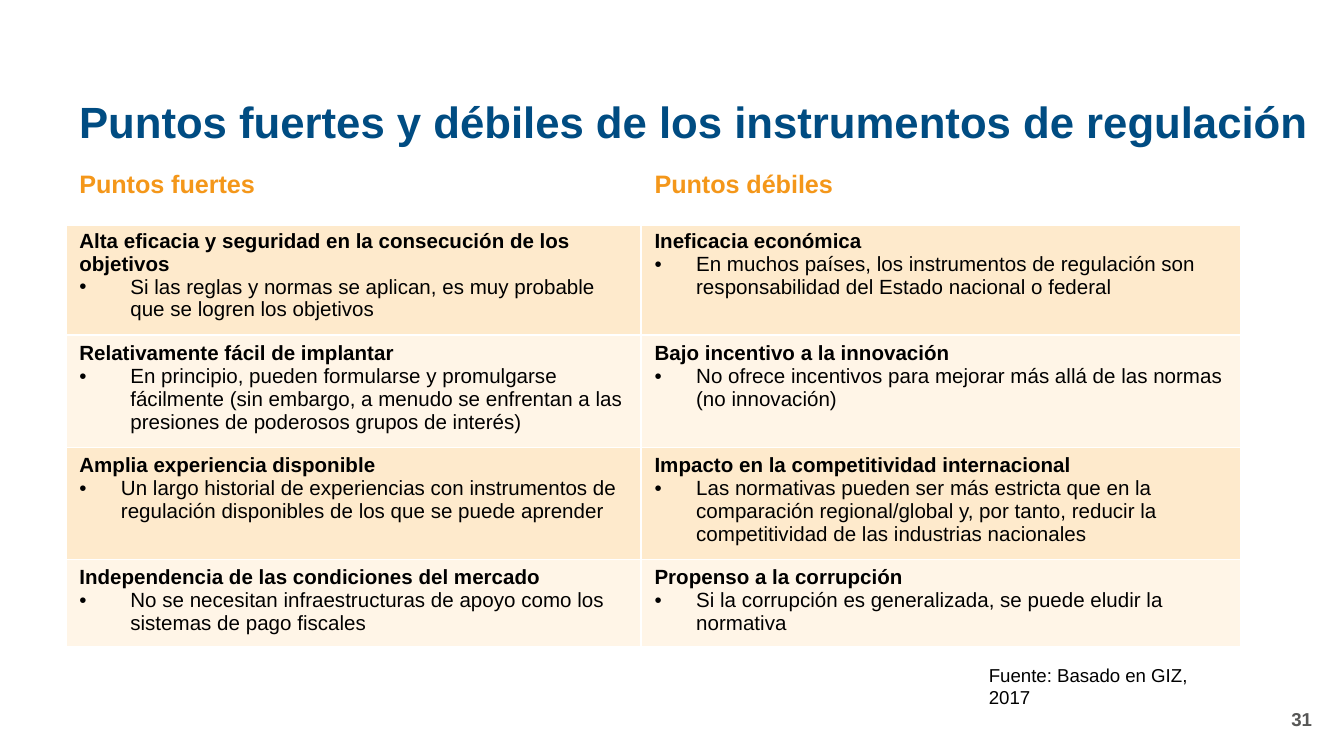
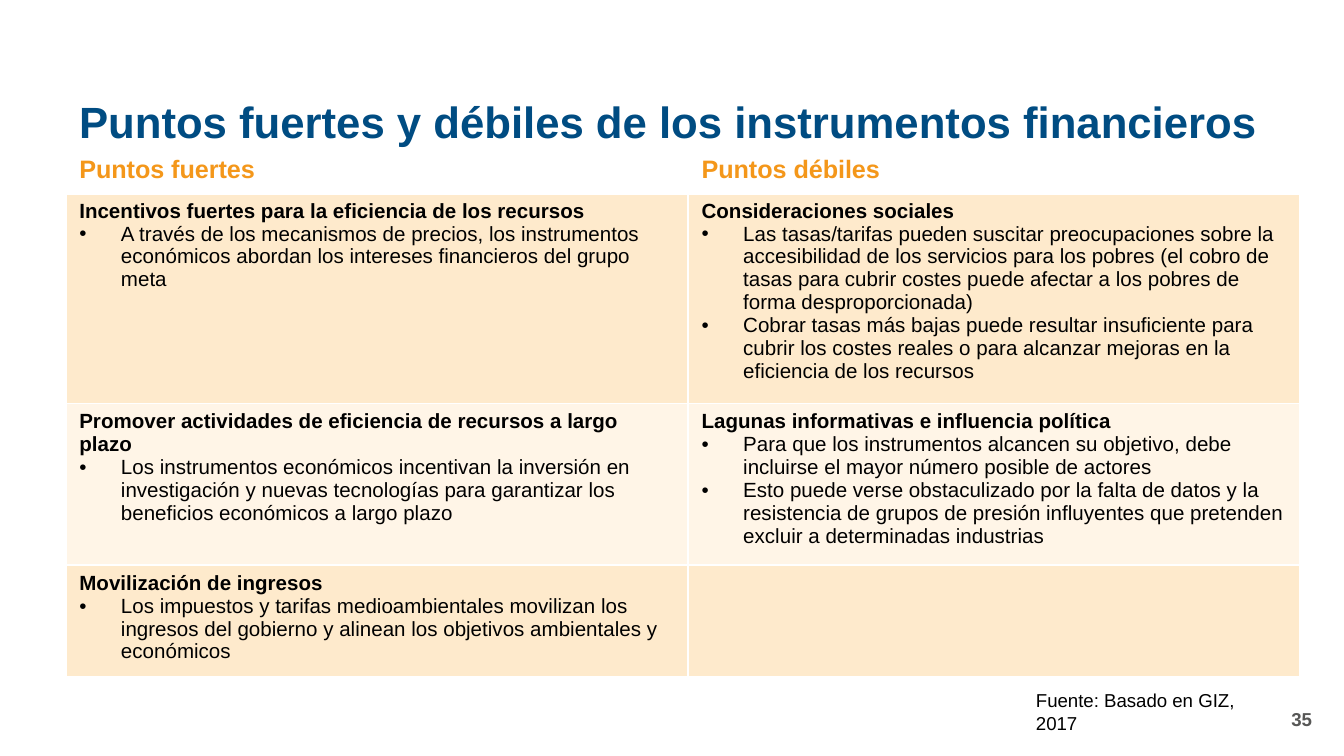
"""Build two slides comparing strengths and weaknesses of policy instruments."""
from dataclasses import dataclass

from lxml import etree
from pptx import Presentation
from pptx import util as u
from pptx.dml import color as c
from pptx.enum import text as t
from pptx.oxml import ns


@dataclass(frozen=True)
class Theme:
    font: str = "Arial"
    title: str = "004C82"
    heading: str = "F4971A"
    body: str = "000000"
    number: str = "575756"
    border: str = "FFFFFF"
    bands: tuple[str, str] = ("FEEACC", "FFF5E7")
    title_size: float = 23.4
    heading_size: float = 13.5
    body_size: float = 11
    small_size: float = 10
    thin: float = 1
    thick: float = 3


@dataclass(frozen=True)
class Point:
    heading: str
    bullets: tuple[str, ...]
    indent: float = 0.31


@dataclass(frozen=True)
class Comparison:
    title: str
    number: str
    top: float
    columns: tuple[float, float]
    heights: tuple[float, ...]
    rows: tuple[tuple[Point | None, Point | None], ...]
    source_at: tuple[float, float]


THEME = Theme()
LEFT = 0.49
HEADINGS = ("Puntos fuertes", "Puntos débiles")
SOURCE = "Fuente: Basado en GIZ, 2017"

COMPARISONS = (
    Comparison(
        "Puntos fuertes y débiles de los instrumentos de regulación",
        "31", 1.22, (4.28, 4.46), (0.44, 0.65, 0.83, 0.65, 0.65),
        (
            (Point("Alta eficacia y seguridad en la consecución de los objetivos",
                   ("Si las reglas y normas se aplican, es muy probable que se "
                    "logren los objetivos",), 0.38),
             Point("Ineficacia económica",
                   ("En muchos países, los instrumentos de regulación son "
                    "responsabilidad del Estado nacional o federal",))),
            (Point("Relativamente fácil de implantar",
                   ("En principio, pueden formularse y promulgarse fácilmente "
                    "(sin embargo, a menudo se enfrentan a las presiones de "
                    "poderosos grupos de interés)",), 0.38),
             Point("Bajo incentivo a la innovación",
                   ("No ofrece incentivos para mejorar más allá de las normas "
                    "(no innovación)",))),
            (Point("Amplia experiencia disponible",
                   ("Un largo historial de experiencias con instrumentos de "
                    "regulación disponibles de los que se puede aprender",)),
             Point("Impacto en la competitividad internacional",
                   ("Las normativas pueden ser más estricta que en la comparación "
                    "regional/global y, por tanto, reducir la competitividad de "
                    "las industrias nacionales",))),
            (Point("Independencia de las condiciones del mercado",
                   ("No se necesitan infraestructuras de apoyo como los sistemas "
                    "de pago fiscales",), 0.38),
             Point("Propenso a la corrupción",
                   ("Si la corrupción es generalizada, se puede eludir la "
                    "normativa",))),
        ),
        (7.26, 4.89),
    ),
    Comparison(
        "Puntos fuertes y débiles de los instrumentos financieros",
        "35", 1.11, (4.63, 4.55), (0.28, 1.35, 1.03, 0.72),
        (
            (Point("Incentivos fuertes para la eficiencia de los recursos",
                   ("A través de los mecanismos de precios, los instrumentos "
                    "económicos abordan los intereses financieros del grupo meta",)),
             Point("Consideraciones sociales",
                   ("Las tasas/tarifas pueden suscitar preocupaciones sobre la "
                    "accesibilidad de los servicios para los pobres (el cobro de "
                    "tasas para cubrir costes puede afectar a los pobres de forma "
                    "desproporcionada)",
                    "Cobrar tasas más bajas puede resultar insuficiente para "
                    "cubrir los costes reales o para alcanzar mejoras en la "
                    "eficiencia de los recursos"))),
            (Point("Promover actividades de eficiencia de recursos a largo plazo",
                   ("Los instrumentos económicos incentivan la inversión en "
                    "investigación y nuevas tecnologías para garantizar los "
                    "beneficios económicos a largo plazo",)),
             Point("Lagunas informativas e influencia política",
                   ("Para que los instrumentos alcancen su objetivo, debe "
                    "incluirse el mayor número posible de actores",
                    "Esto puede verse obstaculizado por la falta de datos y la "
                    "resistencia de grupos de presión influyentes que pretenden "
                    "excluir a determinadas industrias"))),
            (Point("Movilización de ingresos",
                   ("Los impuestos y tarifas medioambientales movilizan los "
                    "ingresos del gobierno y alinean los objetivos ambientales y "
                    "económicos",)),
             None),
        ),
        (7.61, 5.08),
    ),
)


def add_span(para, words: str, size: float, color: str, bold: bool = False) -> None:
    """Write the styled run of a paragraph and size its end mark alike."""
    para.font.size = u.Pt(size)
    span = para.add_run()
    span.text = words
    span.font.name = THEME.font
    span.font.size = u.Pt(size)
    span.font.bold = bold
    span.font.color.rgb = c.RGBColor.from_string(color)
    end = etree.SubElement(para._p, ns.qn("a:endParaRPr"))
    end.set("sz", str(round(size * 100)))


def add_box(page, left: float, top: float, width: float, height: float,
            anchor=t.MSO_ANCHOR.MIDDLE):
    """Add a wrapping text box and return its first paragraph."""
    box = page.shapes.add_textbox(*map(u.Inches, (left, top, width, height)))
    box.text_frame.word_wrap = True
    box.text_frame.vertical_anchor = anchor
    return box.text_frame.paragraphs[0]


def add_bullet(para, indent: float) -> None:
    """Give a paragraph a hanging round bullet."""
    properties = para._p.get_or_add_pPr()
    properties.set("marL", str(u.Inches(indent)))
    properties.set("indent", str(-u.Inches(indent)))
    etree.SubElement(properties, ns.qn("a:buFont")).set("typeface", THEME.font)
    etree.SubElement(properties, ns.qn("a:buChar")).set("char", "•")


def set_borders(cell, bottom: float) -> None:
    """Draw the four cell borders, with a chosen bottom width."""
    properties = cell._tc.get_or_add_tcPr()
    widths = {"lnL": THEME.thin, "lnR": THEME.thin, "lnT": THEME.thin, "lnB": bottom}
    for position, (side, width) in enumerate(widths.items()):
        line = etree.Element(ns.qn(f"a:{side}"), w=str(u.Pt(width)))
        fill = etree.SubElement(line, ns.qn("a:solidFill"))
        etree.SubElement(fill, ns.qn("a:srgbClr")).set("val", THEME.border)
        properties.insert(position, line)


def fill_point(cell, point: Point) -> None:
    """Write a bold heading and its bullets in a cell."""
    frame = cell.text_frame
    add_span(frame.paragraphs[0], point.heading, THEME.body_size, THEME.body, True)
    for bullet in point.bullets:
        para = frame.add_paragraph()
        add_bullet(para, point.indent)
        add_span(para, bullet, THEME.body_size, THEME.body)


def add_comparison_table(page, comparison: Comparison) -> None:
    """Add the two-column table of strengths and weaknesses."""
    size = (sum(comparison.columns), sum(comparison.heights))
    table = page.shapes.add_table(
        len(comparison.heights), len(HEADINGS),
        *map(u.Inches, (LEFT, comparison.top, *size))).table
    table.first_row = table.horz_banding = False
    for column, width in zip(table.columns, comparison.columns):
        column.width = u.Inches(width)
    for row, height in zip(table.rows, comparison.heights):
        row.height = u.Inches(height)
    for index, heading in enumerate(HEADINGS):
        cell = table.cell(0, index)
        cell.fill.background()
        set_borders(cell, THEME.thick)
        add_span(cell.text_frame.paragraphs[0], heading,
                 THEME.heading_size, THEME.heading, True)
    for number, points in enumerate(comparison.rows, start=1):
        for index, point in enumerate(points):
            cell = table.cell(number, index)
            cell.fill.solid()
            band = THEME.bands[(number - 1) % len(THEME.bands)]
            cell.fill.fore_color.rgb = c.RGBColor.from_string(band)
            set_borders(cell, THEME.thin)
            if point:
                fill_point(cell, point)


def add_page(deck, comparison: Comparison) -> None:
    """Add one slide with title, number, table and source."""
    page = deck.slides.add_slide(deck.slide_layouts[6])
    title = add_box(page, LEFT, 0.63, 9.37, 0.59)
    title.line_spacing = 0.9
    add_span(title, comparison.title, THEME.title_size, THEME.title, True)
    number = add_box(page, 7.61, 5.2, 2.25, 0.3)
    number.alignment = t.PP_ALIGN.RIGHT
    add_span(number, comparison.number, THEME.small_size, THEME.number, True)
    add_comparison_table(page, comparison)
    source = add_box(page, *comparison.source_at, 1.97, 0.27, t.MSO_ANCHOR.TOP)
    add_span(source, SOURCE, THEME.small_size, THEME.body)


def main() -> None:
    """Build and save the deck."""
    deck = Presentation()
    deck.slide_width = u.Inches(10)
    deck.slide_height = u.Inches(10 * 9 / 16)
    for comparison in COMPARISONS:
        add_page(deck, comparison)
    deck.save("out.pptx")


if __name__ == "__main__":
    main()
